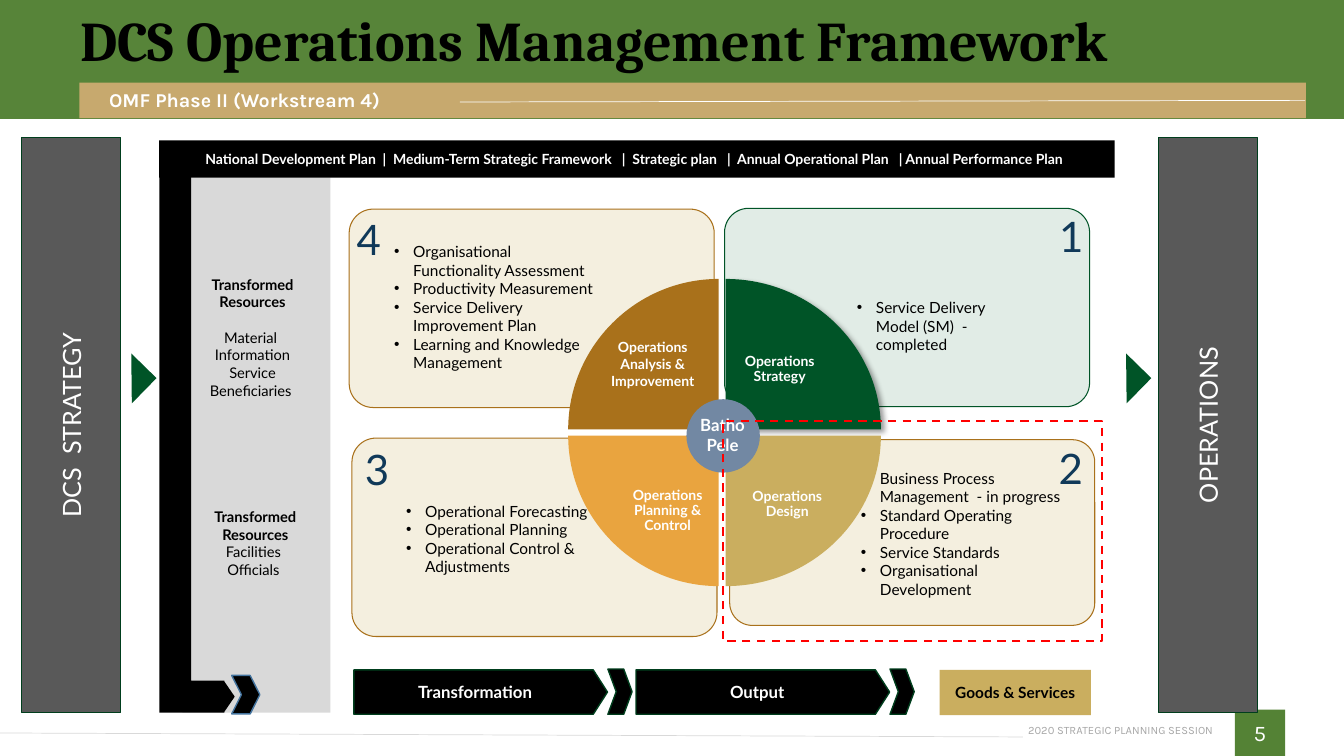
import pptx
import pptx.util
import pptx.dml.color
import pptx.enum.dml
import pptx.enum.shapes
import pptx.enum.text
import pptx.oxml
import pptx.oxml.ns
from dataclasses import dataclass

Cm, Pt = pptx.util.Cm, pptx.util.Pt
KIND = pptx.enum.shapes.MSO_SHAPE
SIDE = pptx.enum.text.PP_ALIGN
EDGE = pptx.enum.text.MSO_ANCHOR
NS = pptx.oxml.ns.nsdecls("a")
ARC = 0.55  # handle length of a quarter curve


@dataclass(frozen=True)
class Theme:
    font: str = "Lato"
    head: str = "Cambria"
    note: str = "Karla"
    black: str = "000000"
    white: str = "FFFFFF"
    grass: str = "548235"
    sand: str = "C7A96E"
    slate: str = "595959"
    pale: str = "D9D9D9"
    mute: str = "A6A6A6"
    edge: str = "003E1D"
    green: str = "005427"
    mint: str = "E1ECE6"
    cream: str = "F4EFDF"
    brown: str = "A9711B"
    gold: str = "CAAE5F"
    amber: str = "E9A43F"
    steel: str = "7288A3"
    navy: str = "103959"
    blue: str = "43739E"
    red: str = "FF0000"
    title: float = 40
    digit: float = 30
    side: float = 18
    page: float = 16
    sub: float = 14
    step: float = 12
    list: float = 11
    small: float = 10.5
    label: float = 10
    foot: float = 8


T = Theme()


def tint(code):
    return pptx.dml.color.RGBColor.from_string(code)


def place(item, box):
    item.left, item.top, item.width, item.height = map(Cm, box)


def write(item, lines, size, color=T.white, bold=False, font=T.font,
          align=SIDE.CENTER, anchor=EDGE.MIDDLE, space=None):
    frame = item.text_frame
    frame.auto_size = pptx.enum.text.MSO_AUTO_SIZE.NONE
    frame.word_wrap = True
    frame.vertical_anchor = anchor
    frame.text = "\n".join(lines)
    for para in frame.paragraphs:
        para.alignment = align
        para.line_spacing = space
        para.space_before = Pt(0)
        for run in para.runs:
            run.font.size, run.font.name, run.font.bold = Pt(size), font, bold
            run.font.color.rgb = tint(color)
    return frame


def label(slide, box, lines, size, **style):
    return write(slide.shapes.add_textbox(*map(Cm, box)), lines, size, **style)


def inset(frame, left=0, top=0, right=0, bottom=0):
    frame.margin_left, frame.margin_top = Cm(left), Cm(top)
    frame.margin_right, frame.margin_bottom = Cm(right), Cm(bottom)


def paint(item, fill, line=None, width=1):
    item.shadow.inherit = False
    if fill:
        item.fill.solid()
        item.fill.fore_color.rgb = tint(fill)
    else:
        item.fill.background()
    if line:
        item.line.color.rgb = tint(line)
        item.line.width = Pt(width)
    else:
        item.line.fill.background()


def block(slide, kind, box, fill=None, line=None, width=1, adjust=()):
    item = slide.shapes.add_shape(kind, *map(Cm, box))
    paint(item, fill, line, width)
    for i, value in enumerate(adjust):
        item.adjustments[i] = value
    return item


def rule(slide, ends, color):
    line = slide.shapes.add_connector(
        pptx.enum.shapes.MSO_CONNECTOR.STRAIGHT, *map(Cm, ends))
    line.line.color.rgb = tint(color)
    line.line.width = Pt(0.5)
    line._element.spPr.append(pptx.oxml.parse_xml(f"<a:effectLst {NS}/>"))


def lift(slide, item):
    slide.shapes._spTree.append(item._element)


def points(slide, item, box, lines, anchor):
    lift(slide, item)
    place(item, box)
    frame = write(item, lines, T.list, T.black, align=SIDE.LEFT, anchor=anchor)
    for para in frame.paragraphs:
        props = para._p.get_or_add_pPr()
        props.set("marL", str(Cm(0.48)))
        props.set("indent", str(-Cm(0.48)))
        props.append(pptx.oxml.parse_xml(f'<a:buChar {NS} char="•"/>'))


def wedge(slide, hub, reach, fill):
    """Quarter of an ellipse whose right angle sits at hub."""
    x, y = map(Cm, hub)
    wide, high = map(Cm, reach)
    path = slide.shapes.build_freeform(x, y)
    path.add_line_segments([(x + wide, y), (x, y + high)], close=True)
    item = path.convert_to_shape()
    paint(item, fill)
    # Bend the outer side
    x, y = x - item.left, y - item.top
    curve = ((x + wide, y + int(ARC * high)), (x + int(ARC * wide), y + high),
             (x, y + high))
    marks = "".join(f'<a:pt x="{a}" y="{b}"/>' for a, b in curve)
    outer = item._element.spPr.findall(".//" + pptx.oxml.ns.qn("a:lnTo"))[1]
    outer.getparent().replace(outer, pptx.oxml.parse_xml(
        f"<a:cubicBezTo {NS}>{marks}</a:cubicBezTo>"))
    return item


def shade(item):
    effects = item._element.spPr.find(pptx.oxml.ns.qn("a:effectLst"))
    effects.append(pptx.oxml.parse_xml(
        f'<a:outerShdw {NS} blurRad="{Pt(4)}" dist="{Pt(3)}" dir="2700000">'
        '<a:srgbClr val="000000"><a:alpha val="40000"/></a:srgbClr></a:outerShdw>'))


def draw_page(slide):
    # Footer
    page = block(slide, KIND.RECTANGLE, (31.12, 17.88, 1.27, 1.17), T.grass)
    write(page, ["5"], T.page, font=T.note)
    inset(label(slide, (25.78, 18.24, 4.8, 0.33), ["2020 STRATEGIC PLANNING SESSION"],
                T.foot, color=T.mute, font=T.note, align=SIDE.RIGHT))
    rule(slide, (25.78, 18.57, 0, 18.47), T.pale)
    # Header: two sheer layers
    for _ in range(2):
        band = block(slide, KIND.RECTANGLE, (0, 0, 33.87, 3), T.grass)
        color = band._element.spPr.find(".//" + pptx.oxml.ns.qn("a:srgbClr"))
        color.append(pptx.oxml.parse_xml(f'<a:alpha {NS} val="85000"/>'))
    block(slide, KIND.ROUNDED_RECTANGLE, (2, 2.08, 30.91, 0.9), T.sand, adjust=[0])
    inset(label(slide, (2.75, 2.21, 8.84, 0.61), ["OMF Phase II (Workstream 4)"],
                T.sub, bold=True, font=T.note, align=SIDE.LEFT))
    rule(slide, (11.59, 2.57, 32.89, 2.53), T.white)
    title = slide.shapes.title
    lift(slide, title)
    place(title, (1.77, -0.05, 31.9, 2.29))
    write(title, ["DCS Operations Management Framework"], T.title, T.black,
          True, T.head, SIDE.LEFT, space=0.9)


def draw_flow(slide):
    # Side columns with their arrows
    for left, tip, text in ((0.54, 2.87, "DCS  STRATEGY"), (29.19, 27.94, "OPERATIONS")):
        wall = block(slide, KIND.RECTANGLE, (left, 3.46, 2.5, 14.5), T.slate, T.edge)
        write(wall, [text], T.side)
        wall._element.txBody.bodyPr.set("vert", "vert270")
        block(slide, KIND.RIGHT_TRIANGLE, (tip, 9.09, 0.89, 0.89), T.green).rotation = 224.4
    # Inputs
    block(slide, KIND.RECTANGLE, (4.6, 4.47, 3.73, 13.49), T.pale)
    inputs = (
        ((4.83, 6.82, 3.07, 4.14), 12.6, ["Material ", "Information", "Service Beneficiaries "]),
        ((4.9, 12.67, 3.07, 2.49), 0, ["Facilities ", "Officials "]))
    for box, gap, names in inputs:
        frame = label(slide, box, ["Transformed Resources"] + names, T.small,
                      color=T.black, anchor=EDGE.TOP)
        frame.paragraphs[0].runs[0].font.bold = True
        frame.paragraphs[1].space_before = Pt(gap)
    # Plans
    plans = block(slide, KIND.RECTANGLE, (4.01, 3.54, 24.08, 0.94), T.black)
    frame = write(plans, [
        "National Development Plan  |  Medium-Term Strategic Framework   |  "
        "Strategic plan   |  Annual Operational Plan   | Annual Performance Plan"],
        T.label, bold=True)
    inset(frame, 0.25, 0.13, 0.4, 0.13)
    bend = block(slide, KIND.BENT_UP_ARROW, (-1.78, 10.24, 13.49, 1.9), T.black,
                 adjust=[0.423, 0.2, 0.137])
    bend.rotation = 90
    block(slide, KIND.CHEVRON, (5.84, 17.02, 0.71, 0.97), T.black, T.blue, adjust=[0.345])
    # Steps to goods
    for left, tip, text in ((8.92, 15.32, "Transformation "), (16.03, 22.43, "Output ")):
        step = block(slide, KIND.PENTAGON, (left, 16.88, 6.39, 1.12), T.black, T.edge,
                     adjust=[0.32])
        write(step, [text], T.step, bold=True)
        block(slide, KIND.CHEVRON, (tip, 16.86, 0.61, 1.14), T.black, T.edge, adjust=[0.345])
    goods = block(slide, KIND.RECTANGLE, (23.68, 16.88, 3.81, 1.14), T.gold)
    write(goods, ["Goods & Services"], T.list, T.black, True)


def draw_cards(slide):
    cards = (
        ("4", (8.8, 5.27, 9.2, 5), (8.61, 5.21, 1.37, 1.63), T.cream, T.brown,
         (9.68, 5.34, 5.69, 4.8), EDGE.MIDDLE,
         ["Organisational Functionality Assessment", "Productivity Measurement",
          "Service Delivery Improvement Plan", "Learning and Knowledge Management"]),
        ("3", (8.87, 11.04, 9.2, 5), (8.68, 10.92, 1.65, 1.78), T.cream, T.brown,
         (9.98, 12.52, 6.25, 2.9), EDGE.TOP,
         ["Operational Forecasting", "Operational Planning",
          "Operational Control & Adjustments"]),
        ("1", (18.26, 5.25, 9.2, 5), (26.39, 5.29, 1.07, 1.3), T.mint, T.green,
         (21.34, 7.39, 3.94, 2.26), EDGE.TOP,
         ["Service Delivery Model (SM)  - completed"]),
        ("2", (18.39, 11.08, 9.2, 4.68), (26.39, 11.36, 1.07, 0.86), T.cream, T.brown,
         (21.44, 11.69, 5.77, 3.85), EDGE.TOP,
         ["Business Process Management  - in progress", "Standard Operating Procedure",
          "Service Standards", "Organisational Development"]))
    bodies = [item for item in slide.placeholders if item.placeholder_format.idx]
    for body, (digit, box, spot, fill, line, area, anchor, lines) in zip(bodies, cards):
        block(slide, KIND.ROUNDED_RECTANGLE, box, fill, line, 0.75, [0.121])
        points(slide, body, area, lines, anchor)
        write(block(slide, KIND.ROUNDED_RECTANGLE, spot), [digit], T.digit, T.navy)


def draw_wheel(slide):
    # Sectors
    parts = ((-1, -1, T.brown), (1, -1, T.green), (1, 1, T.gold), (-1, 1, T.amber))
    items = [wedge(slide, (18.2 + 0.09 * across, 10.9 + 0.08 * down),
                   ((3.85 + 0.06 * across) * across, 3.79 * down), fill)
             for across, down, fill in parts]
    shade(items[1])
    # Sector names
    frame = write(items[1], ["Operations Strategy"], T.label, bold=True, space=0.9)
    inset(frame, 0.23, 1.42, 1.42, 0.64)
    frame = label(slide, (14.66, 7.85, 3.58, 3.1), ["Operations Analysis & Improvement"],
                  T.label, bold=True)
    inset(frame, 0.25, 0.13, 0.25, 0.59)
    plate = block(slide, KIND.RECTANGLE, (18.52, 11.63, 2.64, 1.68), T.gold)
    area = slide.shapes.add_textbox(*map(Cm, (15.39, 11.81, 2.87, 1.65)))
    for item, text in ((plate, "Operations Design"), (area, "Operations Planning & Control")):
        frame = write(item, [text], T.label, bold=True, space=0.9)
        inset(frame, 0.25, 0.61, 0.25, 0.13)
    # Hub
    block(slide, KIND.OVAL, (17.3, 10.06, 1.85, 1.85), T.steel)
    label(slide, (17.36, 10.33, 1.7, 1.27), ["Batho Pele"], T.step, bold=True,
          anchor=EDGE.TOP)


def main():
    deck = pptx.Presentation()
    deck.slide_width, deck.slide_height = Cm(33.87), Cm(19.05)
    slide = deck.slides.add_slide(deck.slide_layouts.get_by_name("Comparison"))
    draw_page(slide)
    draw_flow(slide)
    draw_cards(slide)
    draw_wheel(slide)
    # Focus frame
    focus = block(slide, KIND.RECTANGLE, (18.22, 10.61, 9.55, 5.54), None, T.red, 1.5)
    focus.line.dash_style = pptx.enum.dml.MSO_LINE.DASH
    deck.save("out.pptx")


if __name__ == "__main__":
    main()
